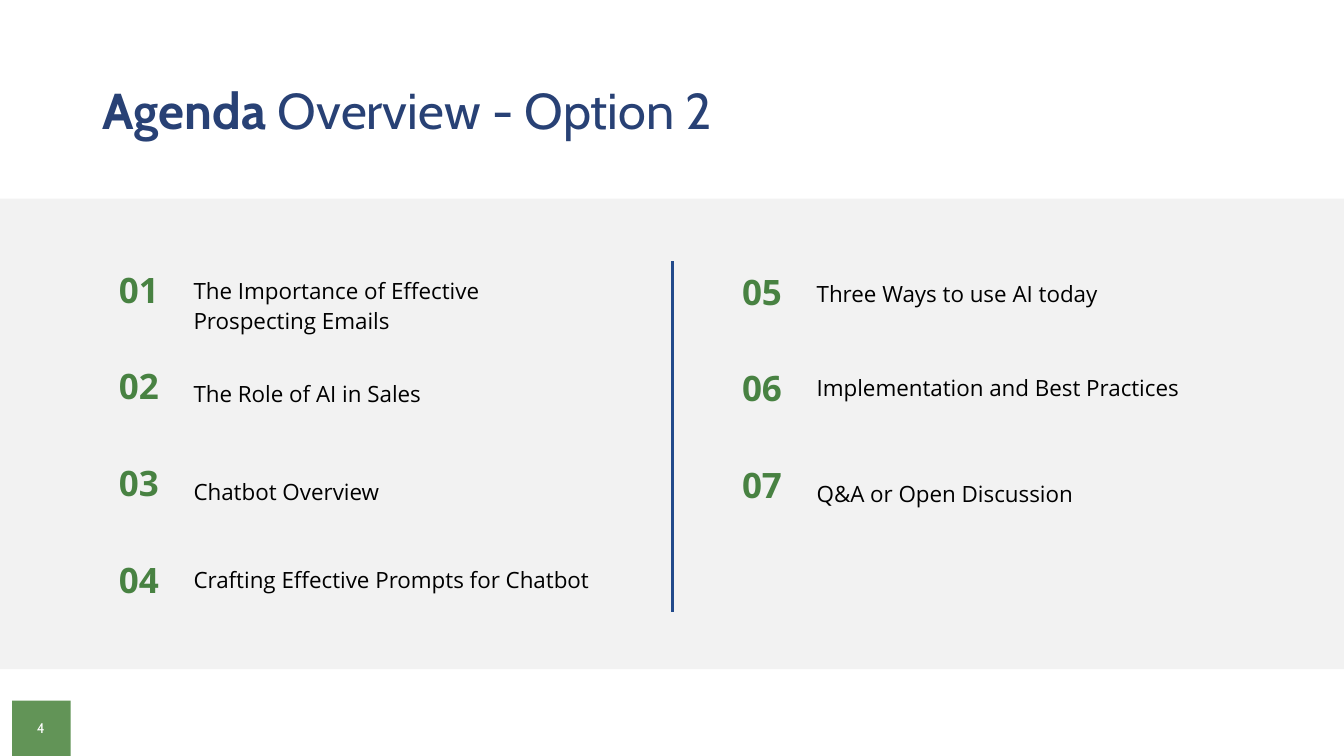
from lxml import etree
from pptx import Presentation
from pptx import util as u
from pptx.dml.color import RGBColor
from pptx.enum import shapes, text
from pptx.oxml import ns

COLOURS = {
    "title": "284175",
    "number": "488242",
    "body": "000000",
    "band": "F2F2F2",
    "divider": "224A8B",
    "badge": "629457",
    "white": "FFFFFF",
}
NUMBER_PITCH = 0.96
COLUMNS = [
    (1.17, 2.65, 1, [
        ("The Importance of Effective Prospecting Emails", 2.71, 3.28, 0.58),
        ("The Role of AI in Sales", 3.73, 3.05, 0.28),
        ("Chatbot Overview", 4.7, 2.09, 0.28),
        ("Crafting Effective Prompts for Chatbot", 5.57, 4.13, 0.28),
    ]),
    (7.35, 2.67, 5, [
        ("Three Ways to use AI today", 2.74, 3.95, 0.28),
        ("Implementation and Best Practices", 3.67, 4.32, 0.28),
        ("Q&A or Open Discussion", 4.72, 3.46, 0.28),
    ]),
]


def colour(name):
    """Return the palette colour with this name."""
    return RGBColor.from_string(COLOURS[name])


def add_span(para, words, *, size, font, ink, bold=False):
    """Add formatted words to a paragraph."""
    span = para.add_run()
    span.text = words
    span.font.size = u.Pt(size)
    span.font.name = font
    span.font.bold = bold
    span.font.color.rgb = colour(ink)


def add_text(page, words, area, *, inset=(0.01, 0.01), spacing=None,
             align=text.PP_ALIGN.LEFT, **style):
    """Add a wrapped text box holding one paragraph."""
    frame = page.shapes.add_textbox(*map(u.Inches, area)).text_frame
    frame.word_wrap = True
    frame.margin_left, frame.margin_top = map(u.Inches, inset)
    frame.margin_right = frame.margin_bottom = 0
    para = frame.paragraphs[0]
    para.alignment = align
    para.line_spacing = spacing
    add_span(para, words, **style)


def add_block(page, area, fill):
    """Add a plain filled rectangle."""
    block = page.shapes.add_shape(
        shapes.MSO_SHAPE.RECTANGLE, *map(u.Inches, area))
    block.shadow.inherit = False
    block.fill.solid()
    block.fill.fore_color.rgb = colour(fill)
    block.line.fill.background()


def add_divider(page, x, top, bottom):
    """Add the vertical line between the columns."""
    line = page.shapes.add_connector(
        shapes.MSO_CONNECTOR.STRAIGHT,
        u.Inches(x), u.Inches(top), u.Inches(x), u.Inches(bottom))
    line.line.color.rgb = colour("divider")
    line.line.width = u.Pt(1.5)
    etree.SubElement(line._element.spPr, ns.qn("a:effectLst"))


def set_title(page):
    """Place and fill the title placeholder."""
    title = page.shapes.title
    title.left, title.top = u.Inches(0.92), u.Inches(0.4)
    title.width, title.height = u.Inches(11.5), u.Inches(1.45)
    frame = title.text_frame
    frame.vertical_anchor = text.MSO_ANCHOR.MIDDLE
    para = frame.paragraphs[0]
    para.alignment = text.PP_ALIGN.LEFT
    para.line_spacing = 0.9
    style = {"size": 36, "font": "Cabin", "ink": "title"}
    add_span(para, "Agenda ", bold=True, **style)
    add_span(para, "Overview - Option 2", **style)


def add_column(page, left, top, first, topics):
    """Add one column of numbered agenda topics."""
    for row, (topic, topic_top, width, height) in enumerate(topics):
        add_text(page, f"{first + row:02d}",
                 (left, top + row * NUMBER_PITCH, 0.42, 0.43),
                 size=25, font="Open Sans", ink="number", bold=True)
        add_text(page, topic, (left + 0.74, topic_top, width, height),
                 spacing=1.12, size=16, font="Open Sans", ink="body")


def main():
    """Build and save the agenda slide."""
    deck = Presentation()
    deck.slide_width, deck.slide_height = u.Inches(13.33), u.Inches(7.5)
    page = deck.slides.add_slide(deck.slide_layouts.get_by_name("Title Only"))
    set_title(page)
    add_block(page, (0.12, 6.95, 0.58, 0.55), "badge")
    add_text(page, "4", (0.19, 7.14, 0.43, 0.17), inset=(0, 0),
             align=text.PP_ALIGN.CENTER, size=10, font="Cabin", ink="white")
    add_block(page, (0, 1.97, 13.33, 4.67), "band")
    for column in COLUMNS:
        add_column(page, *column)
    add_divider(page, 6.67, 2.59, 6.07)
    deck.save("out.pptx")


if __name__ == "__main__":
    main()
